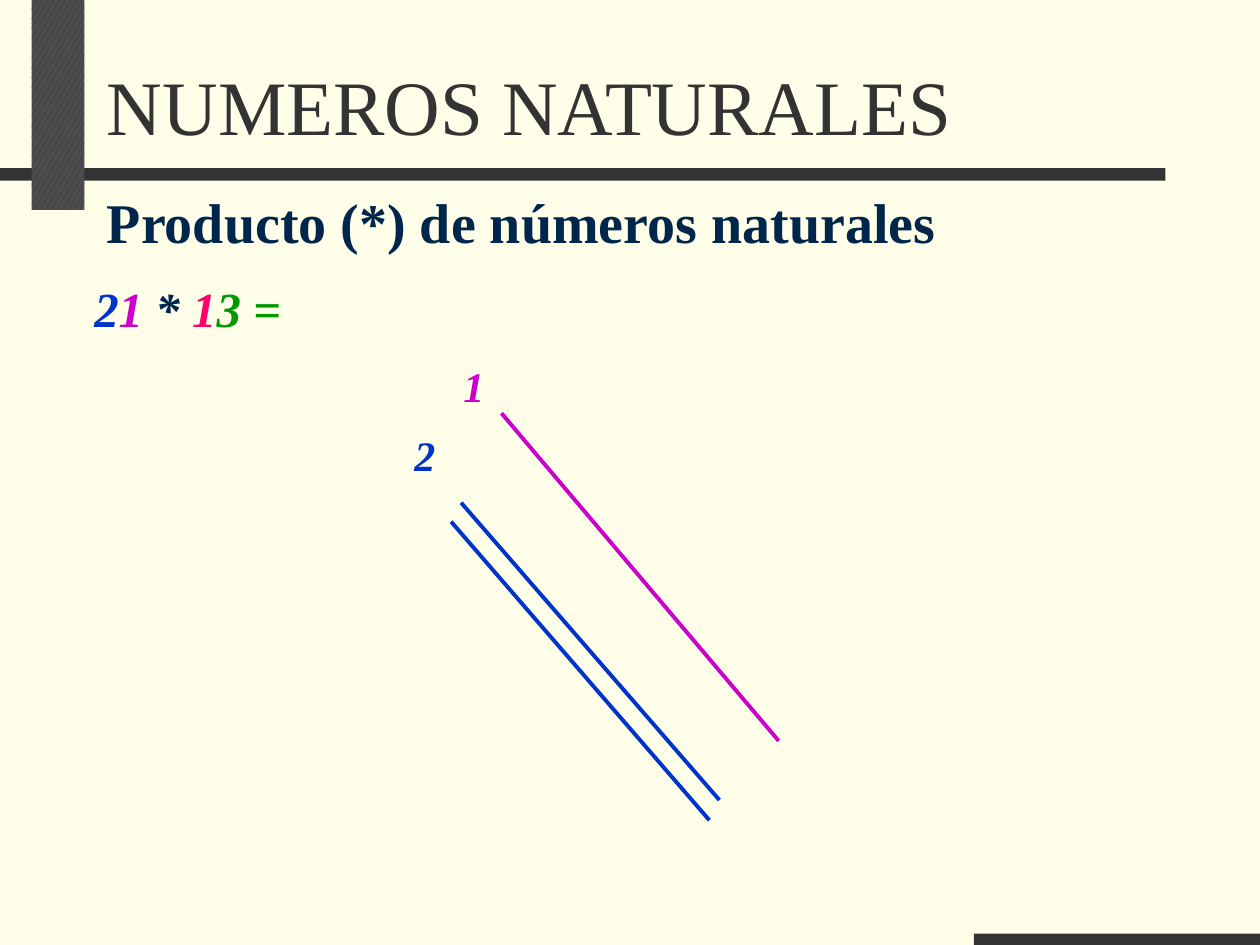
import pptx
import pptx.util
import pptx.dml.color
import pptx.enum.dml
import pptx.enum.shapes
import pptx.enum.text
import lxml.etree
from dataclasses import dataclass

RGB = pptx.dml.color.RGBColor
CREAM = RGB(0xFF, 0xFF, 0xE9)
DARK = RGB(0x33, 0x33, 0x33)
GREY = RGB(0x4D, 0x4D, 0x4D)
SLATE = RGB(0x26, 0x2D, 0x4C)
NAVY = RGB(0x00, 0x26, 0x4C)
BLUE = RGB(0x00, 0x33, 0xCC)
PLUM = RGB(0xCC, 0x00, 0xCC)
PINK = RGB(0xFF, 0x00, 0x66)
GREEN = RGB(0x00, 0x99, 0x00)
FONT = "Times New Roman"
WIDE = pptx.util.Inches(10)
HIGH = pptx.util.Inches(7.5)


# Places are percent shares of the slide's width and height
@dataclass
class Box:
    left: float
    top: float
    width: float
    height: float


@dataclass
class Label:
    box: Box
    runs: list[tuple[str, RGB]]
    size: int
    bold: bool = True
    slant: bool = False
    wrap: bool = False
    low: bool = False


@dataclass
class Stroke:
    start: tuple[float, float]
    end: tuple[float, float]
    color: RGB


def across(share: float) -> int:
    return round(WIDE * share / 100)


def down(share: float) -> int:
    return round(HIGH * share / 100)


def place(box: Box) -> tuple[int, int, int, int]:
    return across(box.left), down(box.top), across(box.width), down(box.height)


def add_bar(slide, box: Box, color: RGB):
    bar = slide.shapes.add_shape(
        pptx.enum.shapes.MSO_SHAPE.RECTANGLE, *place(box))
    bar.shadow.inherit = False
    bar.line.fill.background()
    bar.fill.solid()
    bar.fill.fore_color.rgb = color
    return bar


def add_label(slide, label: Label) -> None:
    frame = slide.shapes.add_textbox(*place(label.box)).text_frame
    frame.word_wrap = label.wrap
    if label.low:
        frame.vertical_anchor = pptx.enum.text.MSO_ANCHOR.BOTTOM
    else:
        frame.auto_size = pptx.enum.text.MSO_AUTO_SIZE.SHAPE_TO_FIT_TEXT
    for text, color in label.runs:
        run = frame.paragraphs[0].add_run()
        run.text = text
        run.font.name = FONT
        run.font.size = pptx.util.Pt(label.size)
        run.font.bold = label.bold
        run.font.italic = label.slant
        run.font.color.rgb = color


def add_stroke(slide, stroke: Stroke) -> None:
    (left, top), (right, base) = stroke.start, stroke.end
    line = slide.shapes.add_connector(
        pptx.enum.shapes.MSO_CONNECTOR.STRAIGHT,
        across(left), down(top), across(right), down(base))
    line.line.color.rgb = stroke.color
    line.line.width = pptx.util.Pt(2.25)
    lxml.etree.SubElement(
        line._element.spPr, pptx.oxml.ns.qn("a:effectLst"))


LABELS = [
    Label(Box(7.5, 4.13, 89.5, 12.53), [("NUMEROS NATURALES", DARK)], 44,
          bold=False, wrap=True, low=True),
    Label(Box(7.5, 19.2, 67.9, 8.4),
          [("Producto (*) de números naturales", NAVY)], 32),
    Label(Box(6.5, 28.8, 25.4, 7.6),
          [("2", BLUE), ("1", PLUM), (" * ", NAVY), ("1", PINK),
           ("3 =", GREEN)], 28, slant=True, wrap=True),
    Label(Box(31.9, 44.8, 3.7, 6.67), [("2", BLUE)], 24, slant=True),
    Label(Box(35.8, 37.47, 3.7, 6.67), [("1", PLUM)], 24, slant=True),
]

# Two lines stand for the tens, one for the unit
STROKES = [
    Stroke((35.8, 55.2), (56.3, 86.8), BLUE),
    Stroke((36.6, 53.2), (57.1, 84.67), BLUE),
    Stroke((39.8, 43.73), (61.8, 78.4), PLUM),
]


def main() -> None:
    deck = pptx.Presentation()
    deck.slide_width, deck.slide_height = WIDE, HIGH
    slide = deck.slides.add_slide(deck.slide_layouts[6])
    slide.background.fill.solid()
    slide.background.fill.fore_color.rgb = CREAM

    # Frame bars, the upright one with a pattern
    add_bar(slide, Box(0, 17.78, 92.5, 1.33), DARK)
    post = add_bar(slide, Box(2.5, 0, 4.2, 22.22), GREY)
    post.fill.patterned()
    post.fill.pattern = pptx.enum.dml.MSO_PATTERN.LARGE_CONFETTI
    post.fill.fore_color.rgb = SLATE
    post.fill.back_color.rgb = GREY
    add_bar(slide, Box(77.3, 98.8, 22.7, 1.2), DARK)

    # Lines and wording
    for stroke in STROKES:
        add_stroke(slide, stroke)
    for label in LABELS:
        add_label(slide, label)
    deck.save("out.pptx")


if __name__ == "__main__":
    main()
